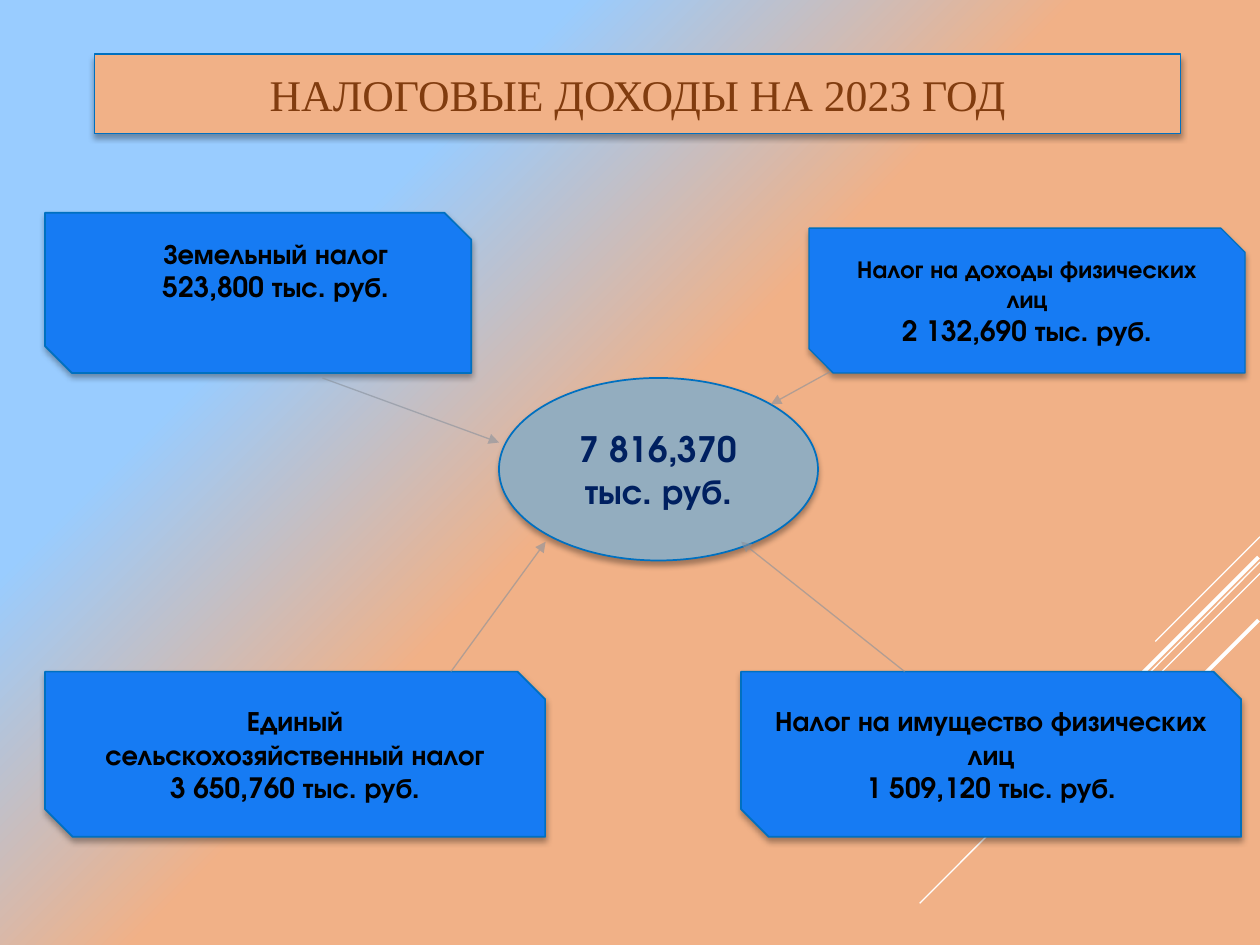
from lxml.etree import SubElement
from pptx import Presentation
from pptx.dml.color import RGBColor
from pptx.enum.shapes import MSO_CONNECTOR, MSO_SHAPE
from pptx.enum.text import MSO_ANCHOR, PP_ALIGN
from pptx.oxml.ns import qn
from pptx.util import Cm, Pt

THEME = {
    "peach": "F1B187", "sky": "99CCFF", "blue": "167BF3", "steel": "93ADBF",
    "outline": "0070C0", "arrow": "89919C", "streak": "FFFFFF", "shadow": "000000",
    "title_text": "813C0F", "tax_text": "000000", "total_text": "002060",
    "title_font": "Times New Roman", "body_font": "TeX Gyre Adventor",
    "title_size": 25, "total_size": 20, "tax_size": 16, "small_size": 14,
}

# Content: places are left, top, width, height in cm
TITLE = ("НАЛОГОВЫЕ ДОХОДЫ НА 2023 ГОД", (1.91, 1.09, 21.89, 1.6))
TOTAL = ("7 816,370 тыс. руб.", (10.06, 7.62, 6.43, 3.68))
LAND_TAX = (["Земельный налог", "523,800 тыс. руб."], (0.91, 4.29, 8.59, 3.23))
INCOME_TAX = (["Налог на доходы физических лиц", "2 132,690 тыс. руб."],
              (16.31, 4.6, 8.79, 2.92))
FARM_TAX = (["Единый", "сельскохозяйственный налог", "3 650,760 тыс. руб."],
            (0.91, 13.54, 10.08, 3.33))
PROPERTY_TAX = (["Налог на имущество физических лиц", "1 509,120 тыс. руб."],
                (14.94, 13.54, 10.08, 3.33))

# Lines: from x, from y, to x, to y in cm
ARROWS = [
    (6.5, 7.62, 10.06, 8.92),
    (16.74, 7.49, 15.54, 8.15),
    (9.09, 13.54, 11, 10.92),
    (18.24, 13.54, 14.94, 10.92),
]
STREAKS = [
    ((25.4, 10.82, 23.29, 12.93), 0.75),
    ((25.4, 11.33, 18.54, 18.21), 0.75),
    ((25.4, 11.56, 21.03, 15.93), 0.75),
    ((25.37, 11.23, 21.39, 15.21), 2.25),
    ((25.37, 12.5, 22.48, 15.39), 2.25),
]


def color(name):
    return RGBColor.from_string(THEME[name])


def add(parent, tag, **attributes):
    return SubElement(parent, qn(tag), {key: str(val) for key, val in attributes.items()})


def add_color(parent, name, alpha=None):
    rgb = add(parent, "a:srgbClr", val=THEME[name])
    if alpha is not None:
        add(rgb, "a:alpha", val=alpha * 1000)


def paint_background(slide):
    slide.background.fill.gradient()
    gradient = slide.element.find(".//" + qn("a:gradFill"))
    for child in list(gradient):
        gradient.remove(child)
    stops = add(gradient, "a:gsLst")
    for position, name in ((51, "peach"), (74, "sky")):
        add_color(add(stops, "a:gs", pos=position * 1000), name)
    focus = add(gradient, "a:path", path="circle")
    add(focus, "a:fillToRect", l=100000, t=100000)


def add_line(slide, ends, name, width):
    line = slide.shapes.add_connector(MSO_CONNECTOR.STRAIGHT, *map(Cm, ends))
    line.line.color.rgb = color(name)
    line.line.width = Pt(width)
    add(line.element.spPr, "a:effectLst")
    return line


def add_arrow(slide, ends):
    outline = add_line(slide, ends, "arrow", 0.75).line._get_or_add_ln()
    add(outline.find(".//" + qn("a:srgbClr")), "a:alpha", val=60000)
    add(outline, "a:tailEnd", type="triangle")


def add_box(slide, kind, place, fill, lines, font, sizes, ink, bold=True, width=1):
    box = slide.shapes.add_shape(kind, *map(Cm, place))
    box.fill.solid()
    box.fill.fore_color.rgb = color(fill)
    box.line.color.rgb = color("outline")
    box.line.width = Pt(width)

    # Soft shadow straight below
    box.shadow.inherit = False
    effects = box.element.spPr.find(qn("a:effectLst"))
    shadow = add(effects, "a:outerShdw", blurRad=Pt(3.5), dist=Pt(2.2),
                 dir=5400000, algn="ctr", rotWithShape=0)
    add_color(shadow, "shadow", 32)

    frame = box.text_frame
    frame.word_wrap = True
    frame.vertical_anchor = MSO_ANCHOR.MIDDLE
    frame.text = "\n".join(lines)
    for paragraph, size in zip(frame.paragraphs, sizes):
        paragraph.alignment = PP_ALIGN.CENTER
        for run in paragraph.runs:
            run.font.name = THEME[font]
            run.font.size = Pt(THEME[size])
            run.font.bold = bold
            run.font.color.rgb = color(ink)
    return box


def add_tax(slide, tax, first_size="tax_size", width=1):
    lines, place = tax
    sizes = [first_size] + ["tax_size"] * (len(lines) - 1)
    return add_box(slide, MSO_SHAPE.SNIP_2_DIAG_RECTANGLE, place, "blue", lines,
                   "body_font", sizes, "tax_text", width=width)


def main():
    deck = Presentation()
    deck.slide_width, deck.slide_height = Cm(25.4), Cm(19.05)
    slide = deck.slides.add_slide(deck.slide_layouts[6])

    # Backdrop with corner streaks
    paint_background(slide)
    for ends, width in STREAKS:
        add_line(slide, ends, "streak", width)

    # Title and total
    heading, place = TITLE
    add_box(slide, MSO_SHAPE.RECTANGLE, place, "peach", [heading], "title_font",
            ["title_size"], "title_text", bold=False, width=0.75)
    amount, place = TOTAL
    add_box(slide, MSO_SHAPE.OVAL, place, "steel", [amount], "body_font",
            ["total_size"], "total_text")

    # Taxes; the land tax text sits high and a little to the right
    land = add_tax(slide, LAND_TAX).text_frame
    land.vertical_anchor = MSO_ANCHOR.TOP
    land.margin_left, land.margin_top = Cm(0.71), Cm(0.2)
    land.margin_right = land.margin_bottom = 0
    add_tax(slide, INCOME_TAX, first_size="small_size", width=0.75)
    add_tax(slide, FARM_TAX)
    add_tax(slide, PROPERTY_TAX)

    # Arrows towards the total
    for ends in ARROWS:
        add_arrow(slide, ends)

    deck.save("out.pptx")


if __name__ == "__main__":
    main()
